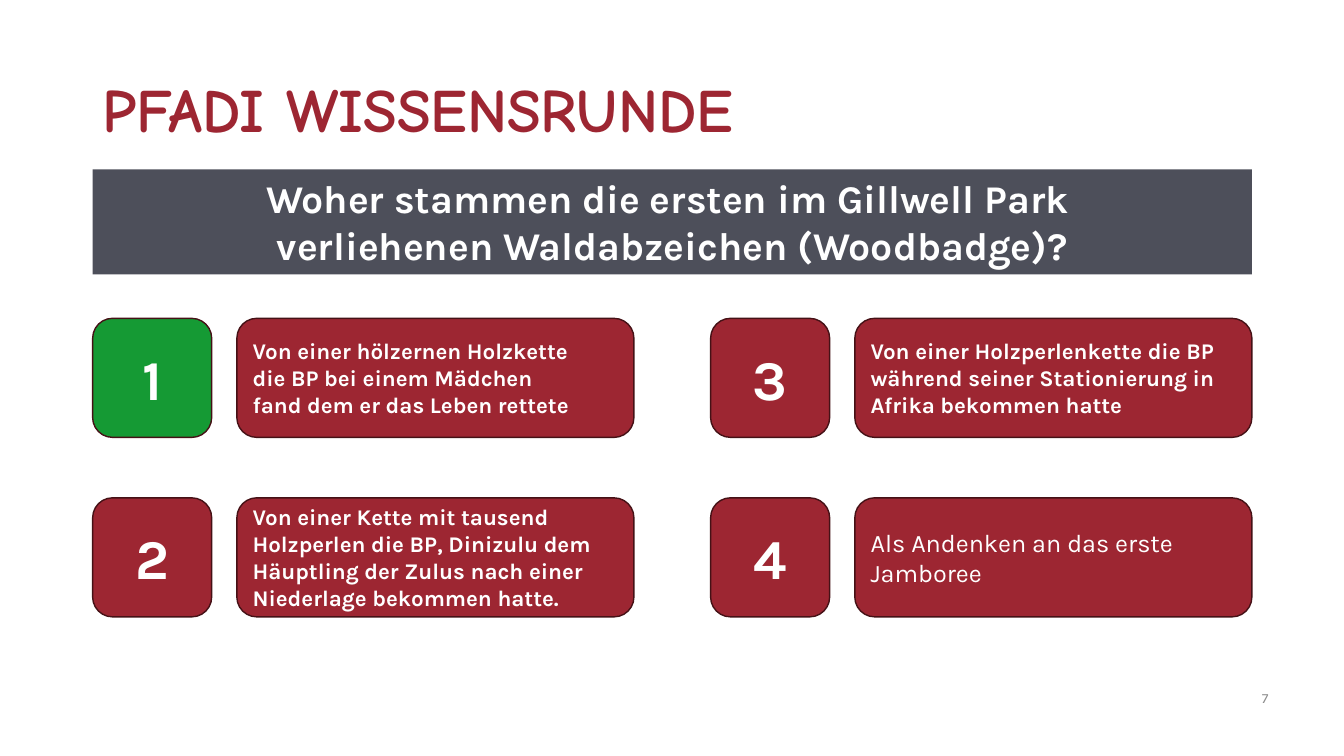
from pptx import Presentation
from pptx.dml.color import RGBColor
from pptx.enum import shapes, text
from pptx.util import Pt

RED, GREEN, GREY, BORDER = "9D2632", "159A34", "4D4F5A", "451116"
WHITE, PALE = "FFFFFF", "8C8C8C"
LEFT, WIDTH = 66.2, 828
CELL_HEIGHT, NUMBER_WIDTH, ANSWER_OFFSET = 85, 85, 103
ANSWER_WIDTH = 283.6
COLUMN_STEP = WIDTH - ANSWER_OFFSET - ANSWER_WIDTH
GRID_TOP, ROW_STEP = 227.4, 128.2

ANSWERS = [
    (["Von einer hölzernen Holzkette", "die BP bei einem Mädchen",
      "fand dem er das Leben rettete"], 16, True),
    (["Von einer Kette mit tausend Holzperlen die BP, Dinizulu dem "
      "Häuptling der Zulus nach einer Niederlage bekommen hatte."], 16, True),
    (["Von einer Holzperlenkette die BP während seiner Stationierung in "
      "Afrika bekommen hatte"], 16, True),
    (["Als Andenken an das erste Jamboree"], 18, False),
]
CORRECT = 1


def color(value):
    return RGBColor.from_string(value)


def write(shape, lines, size, font="Karla", fill=WHITE, bold=False,
          align=text.PP_ALIGN.LEFT, anchor=text.MSO_ANCHOR.MIDDLE, spacing=None):
    frame = shape.text_frame
    frame.auto_size = text.MSO_AUTO_SIZE.NONE
    frame.word_wrap = True
    frame.vertical_anchor = anchor
    for index, line in enumerate(lines):
        paragraph = frame.add_paragraph() if index else frame.paragraphs[0]
        paragraph.alignment = align
        paragraph.line_spacing = spacing
        run = paragraph.add_run()
        run.text = line
        run.font.name, run.font.size, run.font.bold = font, Pt(size), bold
        run.font.color.rgb = color(fill)


def add_box(slide, kind, box, fill, line=None):
    shape = slide.shapes.add_shape(kind, *map(Pt, box))
    shape.shadow.inherit = False
    shape.fill.solid()
    shape.fill.fore_color.rgb = color(fill)
    if line:
        shape.line.color.rgb = color(line)
        shape.line.width = Pt(1)
    else:
        shape.line.fill.background()
    return shape


def add_title(slide, box):
    title = slide.shapes.title
    title.left, title.top, title.width, title.height = map(Pt, box)
    write(title, ["PFADI WISSENSRUNDE"], 44, font="Comic Neue", fill=RED,
          bold=True, spacing=0.9)


def add_question(slide, box):
    banner = add_box(slide, shapes.MSO_SHAPE.RECTANGLE, box, GREY)
    write(banner, ["Woher stammen die ersten im Gillwell Park ",
                   "verliehenen Waldabzeichen (Woodbadge)?"], 28, bold=True,
          align=text.PP_ALIGN.CENTER, anchor=text.MSO_ANCHOR.TOP)


def add_answer(slide, box, number, lines, size, bold):
    left, top, width, height = box
    rounded = shapes.MSO_SHAPE.ROUNDED_RECTANGLE
    badge = add_box(slide, rounded, (left, top, NUMBER_WIDTH, height),
                    GREEN if number == CORRECT else RED, BORDER)
    write(badge, [str(number)], 40, bold=True, align=text.PP_ALIGN.CENTER)
    answer = add_box(slide, rounded,
                     (left + ANSWER_OFFSET, top, width - ANSWER_OFFSET, height),
                     RED, BORDER)
    write(answer, lines, size, bold=bold)


def add_answers(slide, left, top):
    for index, (lines, size, bold) in enumerate(ANSWERS):
        column, row = divmod(index, 2)
        box = (left + column * COLUMN_STEP, top + row * ROW_STEP,
               ANSWER_OFFSET + ANSWER_WIDTH, CELL_HEIGHT)
        add_answer(slide, box, index + 1, lines, size, bold)


def add_page_number(slide, box):
    write(slide.shapes.add_textbox(*map(Pt, box)), ["7"], 10, fill=PALE)


def main():
    presentation = Presentation()
    presentation.slide_width, presentation.slide_height = Pt(960), Pt(540)
    slide = presentation.slides.add_slide(presentation.slide_layouts[5])
    add_title(slide, (LEFT, 28, WIDTH, 104.4))
    add_question(slide, (LEFT, 121, WIDTH, 75))
    add_answers(slide, LEFT, GRID_TOP)
    add_page_number(slide, (LEFT + WIDTH, 484, 65.8, 28.8))
    presentation.save("out.pptx")


if __name__ == "__main__":
    main()
